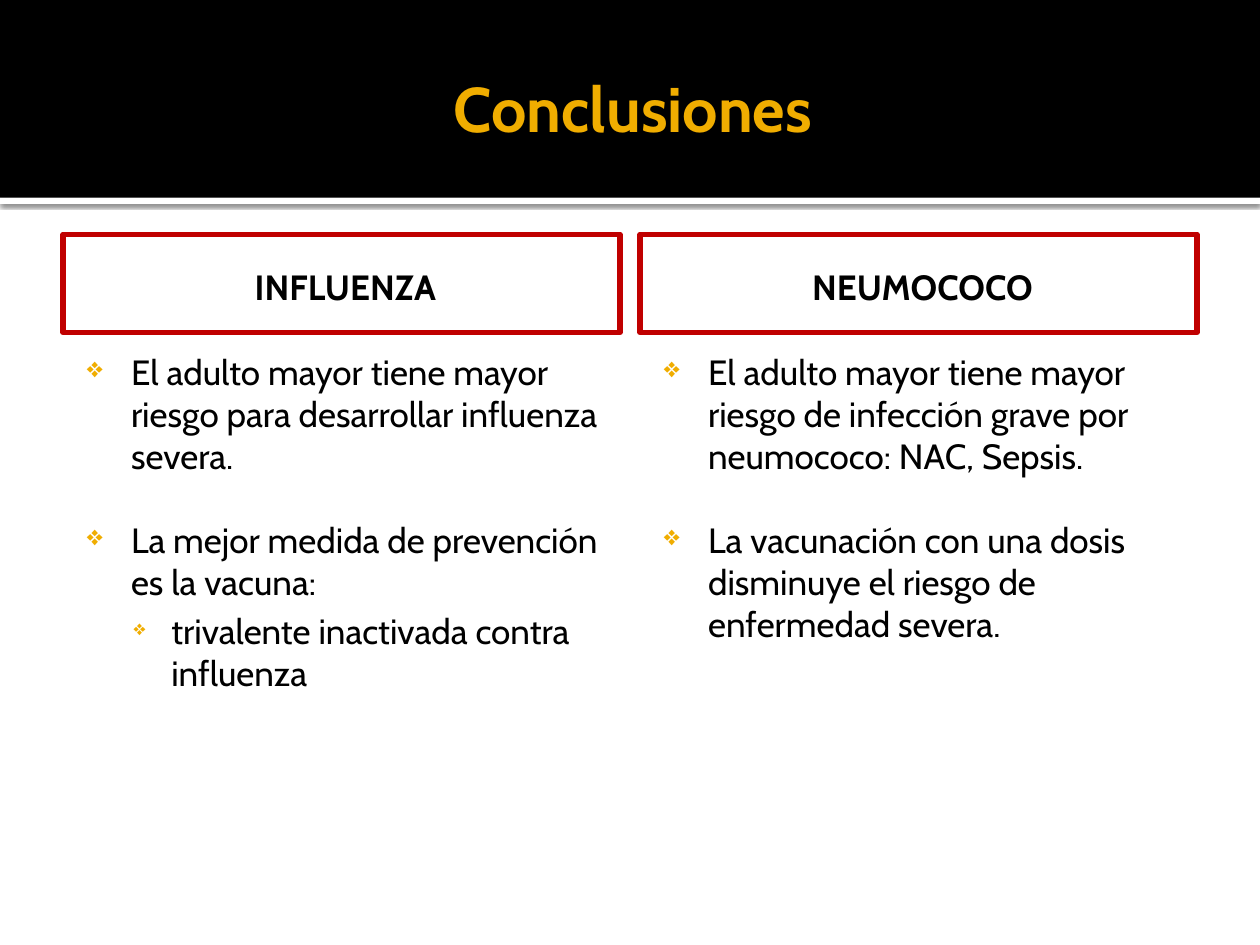
"""Build a conclusions slide with two headed columns of bullets."""
from dataclasses import dataclass

import lxml.etree
import pptx
import pptx.dml.color
import pptx.enum.shapes
import pptx.enum.text
import pptx.oxml.ns
import pptx.slide
import pptx.util

Pt = pptx.util.Pt
qn = pptx.oxml.ns.qn
RGBColor = pptx.dml.color.RGBColor
ALIGN = pptx.enum.text.PP_ALIGN
ANCHOR = pptx.enum.text.MSO_ANCHOR

BLACK = RGBColor(0x00, 0x00, 0x00)
WHITE = RGBColor(0xFF, 0xFF, 0xFF)
AMBER = RGBColor(0xF0, 0xAD, 0x00)
RED = RGBColor(0xC0, 0x00, 0x00)
FONT = "Cabin"

WIDTH, HEIGHT = 720, 540
BAND_HEIGHT, STRIP_HEIGHT = 113, 3.6
MARGIN, COLUMN_WIDTH = 36, 318.24
HEADING_TOP, HEADING_HEIGHT = 133.92, 56.16
BODY_TOP, BODY_HEIGHT = 192.96, 311.04


@dataclass(frozen=True)
class Box:
    left: float
    top: float
    width: float
    height: float

    def lengths(self) -> list:
        """Return the position and size as lengths."""
        return [Pt(value) for value in (self.left, self.top, self.width, self.height)]


@dataclass(frozen=True)
class BulletStyle:
    level: int
    margin: float
    indent: float
    size_percent: int


@dataclass(frozen=True)
class Bullet:
    text: str
    style: BulletStyle
    space_before: float = 0


@dataclass(frozen=True)
class Column:
    heading: str
    bullets: tuple[Bullet, ...]


MAIN = BulletStyle(0, 34.56, -25.2, 80)
DETAIL = BulletStyle(1, 57.6, -21.6, 60)

COLUMNS = (
    Column("INFLUENZA", (
        Bullet("El adulto mayor tiene mayor riesgo para desarrollar influenza severa.", MAIN),
        Bullet("La mejor medida de prevención es la vacuna:", MAIN, 24),
        Bullet("trivalente inactivada contra influenza", DETAIL, 4),
    )),
    Column("NEUMOCOCO", (
        Bullet("El adulto mayor tiene mayor riesgo de infección grave por neumococo: NAC, Sepsis.", MAIN),
        Bullet("La vacunación con una dosis disminuye el riesgo de enfermedad severa.", MAIN, 24),
    )),
)


def apply_format(target, values: dict) -> None:
    """Set every named attribute on the target."""
    for name, value in values.items():
        setattr(target, name, value)


def format_frame(shape, insets: tuple, anchor):
    """Set wrapping, insets and anchor, and return the text frame."""
    frame = shape.text_frame
    left, top, right, bottom = insets
    apply_format(frame, {
        "word_wrap": True, "vertical_anchor": anchor,
        "margin_left": Pt(left), "margin_top": Pt(top),
        "margin_right": Pt(right), "margin_bottom": Pt(bottom),
    })
    return frame


def write(paragraph, text: str, size: float, color: RGBColor, bold: bool = False) -> None:
    """Add a formatted run to the paragraph."""
    run = paragraph.add_run()
    run.text = text
    apply_format(run.font, {"name": FONT, "size": Pt(size), "bold": bold})
    run.font.color.rgb = color


def add_rectangle(slide: pptx.slide.Slide, box: Box, fill: RGBColor | None = None,
                  line: RGBColor | None = None):
    """Add a flat rectangle with an optional fill and outline."""
    shape = slide.shapes.add_shape(pptx.enum.shapes.MSO_SHAPE.RECTANGLE, *box.lengths())
    shape.shadow.inherit = False
    if fill is None:
        shape.fill.background()
    else:
        shape.fill.solid()
        shape.fill.fore_color.rgb = fill
    if line is None:
        shape.line.fill.background()
    else:
        shape.line.color.rgb = line
        shape.line.width = Pt(3)
    return shape


def add_shadow(shape) -> None:
    """Give the shape a soft shadow straight below it."""
    effects = shape._element.spPr.find(qn("a:effectLst"))
    shadow = lxml.etree.SubElement(effects, qn("a:outerShdw"), {
        "blurRad": str(Pt(2.5)), "dist": str(Pt(0.8)), "dir": "5400000", "rotWithShape": "0"})
    color = lxml.etree.SubElement(shadow, qn("a:srgbClr"), val=str(BLACK))
    lxml.etree.SubElement(color, qn("a:alpha"), val="60000")


def add_header(slide: pptx.slide.Slide, title: str) -> None:
    """Draw the title band with its shaded strip and the title."""
    add_shadow(add_rectangle(slide, Box(0, BAND_HEIGHT, WIDTH, STRIP_HEIGHT), fill=WHITE))
    add_rectangle(slide, Box(0, 0, WIDTH, BAND_HEIGHT), fill=BLACK)
    shape = slide.shapes.add_textbox(*Box(MARGIN, 12.24, WIDTH - 2 * MARGIN, 98.64).lengths())
    paragraph = format_frame(shape, (7.2, 3.6, 3.6, 3.6), ANCHOR.MIDDLE).paragraphs[0]
    paragraph.alignment = ALIGN.CENTER
    write(paragraph, title, 36, AMBER, bold=True)


def add_bullet(paragraph, bullet: Bullet) -> None:
    """Write one bullet with its marker and hanging indent."""
    style = bullet.style
    apply_format(paragraph, {"level": style.level, "alignment": ALIGN.LEFT,
                             "space_before": Pt(bullet.space_before)})
    properties = paragraph._p.get_or_add_pPr()
    properties.set("marL", str(Pt(style.margin)))
    properties.set("indent", str(Pt(style.indent)))
    color = lxml.etree.SubElement(properties, qn("a:buClr"))
    lxml.etree.SubElement(color, qn("a:srgbClr"), val=str(AMBER))
    lxml.etree.SubElement(properties, qn("a:buSzPct"), val=str(style.size_percent * 1000))
    lxml.etree.SubElement(properties, qn("a:buChar"), char="❖")
    write(paragraph, bullet.text, 20, BLACK)


def add_column(slide: pptx.slide.Slide, column: Column, left: float) -> None:
    """Draw a framed heading and the bullets below it."""
    heading = add_rectangle(slide, Box(left, HEADING_TOP, COLUMN_WIDTH, HEADING_HEIGHT), line=RED)
    paragraph = format_frame(heading, (11.52, 7.2, 7.2, 3.6), ANCHOR.MIDDLE).paragraphs[0]
    paragraph.alignment = ALIGN.CENTER
    write(paragraph, column.heading, 20, BLACK, bold=True)

    body = slide.shapes.add_textbox(*Box(left, BODY_TOP, COLUMN_WIDTH, BODY_HEIGHT).lengths())
    frame = format_frame(body, (4.32, 7.2, 7.2, 3.6), ANCHOR.TOP)
    for index, bullet in enumerate(column.bullets):
        add_bullet(frame.add_paragraph() if index else frame.paragraphs[0], bullet)


def main() -> None:
    """Create and save the presentation."""
    presentation = pptx.Presentation()
    apply_format(presentation, {"slide_width": Pt(WIDTH), "slide_height": Pt(HEIGHT)})
    slide = presentation.slides.add_slide(presentation.slide_layouts[6])
    add_header(slide, "Conclusiones")
    for column, left in zip(COLUMNS, (MARGIN, WIDTH - MARGIN - COLUMN_WIDTH)):
        add_column(slide, column, left)
    presentation.save("out.pptx")


if __name__ == "__main__":
    main()
